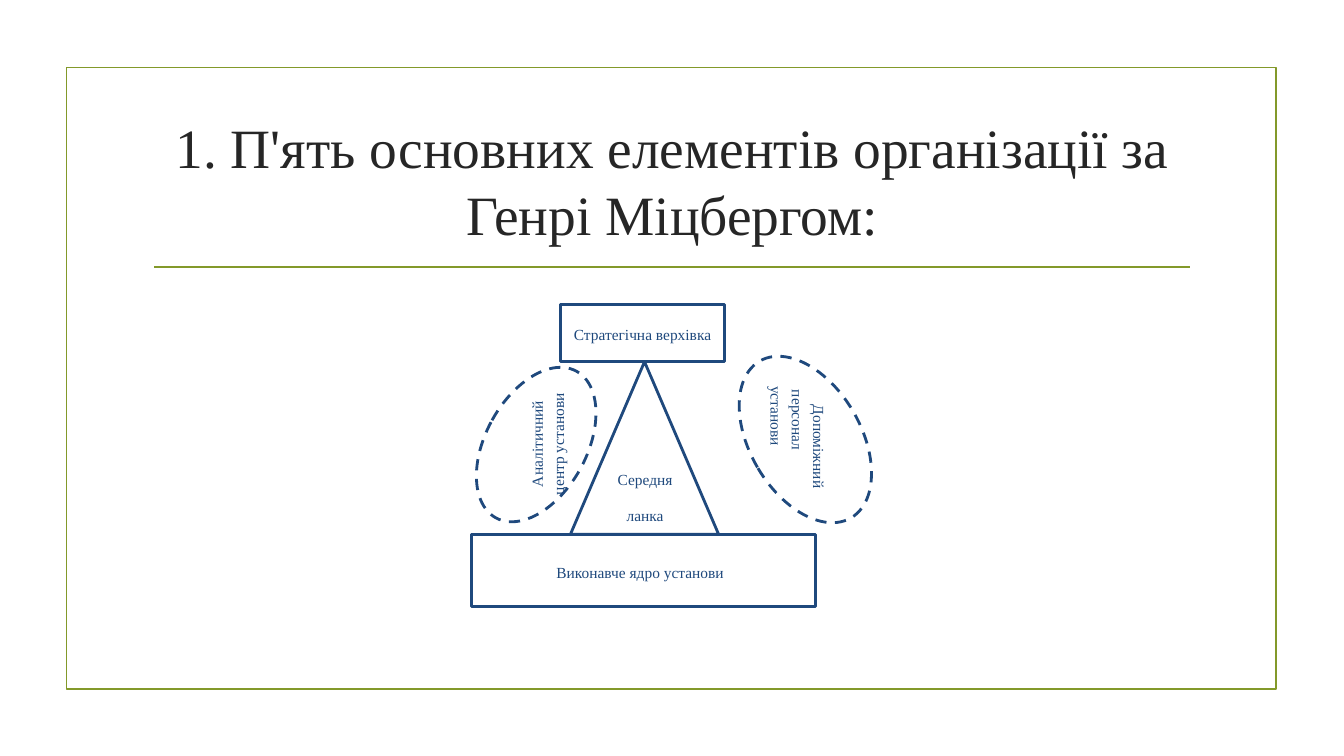
from pptx import Presentation
from pptx.dml.color import RGBColor
from pptx.enum.dml import MSO_LINE
from pptx.enum.shapes import MSO_CONNECTOR, MSO_SHAPE
from pptx.enum.text import MSO_ANCHOR, PP_ALIGN
from pptx.oxml.ns import qn
from pptx.util import Pt
from lxml import etree

COLORS = {"olive": "83992A", "navy": "1F497D", "title": "262626", "white": "FFFFFF"}
FONT = "Times New Roman"


def rgb(name):
    return RGBColor.from_string(COLORS[name])


def add_outline(s, kind, x, y, w, h, color="navy", width=2, fill="white"):
    sp = s.shapes.add_shape(kind, Pt(x), Pt(y), Pt(w), Pt(h))
    sp.shadow.inherit = False
    if fill:
        sp.fill.solid()
        sp.fill.fore_color.rgb = rgb(fill)
    else:
        sp.fill.background()
    sp.line.color.rgb = rgb(color)
    sp.line.width = Pt(width)
    return sp


def write_label(sp, text, anchor=MSO_ANCHOR.MIDDLE, vert=None, after=0):
    tf = sp.text_frame
    tf.text = text
    tf.word_wrap = True
    tf.vertical_anchor = anchor
    tf.margin_left = tf.margin_right = 0
    tf.margin_top = tf.margin_bottom = Pt(3.6)
    if vert:
        # Vertical text runs along the box height, so the ends need no inset
        tf.margin_top = tf.margin_bottom = 0
        tf._txBody.find(qn("a:bodyPr")).set("vert", vert)
    for p in tf.paragraphs:
        p.alignment = PP_ALIGN.CENTER
        p.line_spacing = 1.15
        p.space_after = Pt(after)
        for r in p.runs:
            r.font.name = FONT
            r.font.size = Pt(11)
            r.font.color.rgb = rgb("navy")
    return tf


def add_label(s, x, y, w, h, text, **options):
    box = s.shapes.add_textbox(Pt(x), Pt(y), Pt(w), Pt(h))
    return write_label(box, text, **options)


def add_frame(s, x, y, w, h):
    # Border and the rule under the title
    add_outline(s, MSO_SHAPE.RECTANGLE, x, y, w, h, "olive", 1.25, None)
    rule = s.shapes.add_connector(MSO_CONNECTOR.STRAIGHT, Pt(x + 62.7), Pt(y + 142.6),
                                  Pt(x + 802.8), Pt(y + 142.6))
    rule.line.color.rgb = rgb("olive")
    rule.line.width = Pt(1.25)
    etree.SubElement(rule._element.spPr, qn("a:effectLst"))


def add_title(s, x, y, w, h, text):
    title = s.shapes.title
    title.left, title.top, title.width, title.height = Pt(x), Pt(y), Pt(w), Pt(h)
    tf = title.text_frame
    tf.text = text
    tf.word_wrap = True
    tf.vertical_anchor = MSO_ANCHOR.MIDDLE
    p = tf.paragraphs[0]
    p.alignment = PP_ALIGN.CENTER
    r = p.runs[0]
    r.font.name = FONT
    r.font.size = Pt(39.6)
    r.font.color.rgb = rgb("title")


def add_organization(s, x, y, w, h):
    # Side ellipses: analysts and support staff
    for dx, dy, ew, eh, angle in [(198.7, 31.7, 79.2, 129.6, 329.8),
                                  (10, 40.4, 72, 119.5, 28.8)]:
        ellipse = add_outline(s, MSO_SHAPE.OVAL, x + dx, y + dy, ew, eh, fill=None)
        ellipse.rotation = angle
        ellipse.line.dash_style = MSO_LINE.DASH

    # Base, middle triangle and top
    top_h, base_h = 41, 51.8
    base = add_outline(s, MSO_SHAPE.RECTANGLE, x, y + h - base_h, w, base_h)
    write_label(base, "Виконавче ядро установи").margin_right = Pt(5)
    add_outline(s, MSO_SHAPE.ISOSCELES_TRIANGLE, x + 70.5, y + top_h,
                105.8, h - top_h - base_h)
    top = add_outline(s, MSO_SHAPE.RECTANGLE, x + 63.3, y, 117.4, top_h)
    write_label(top, "Стратегічна верхівка")

    # Labels inside the ellipses and the triangle
    tf = add_label(s, x + 206.5, y + 58.4, 55, 86.4,
                   "Допоміжний\nперсонал установи", vert="vert")
    staff = tf.paragraphs[1]
    staff.alignment = PP_ALIGN.LEFT
    staff._p.get_or_add_pPr().set("indent", str(Pt(2.75)))
    add_label(s, x + 33, y + 55.5, 40, 88.6,
              "Аналітичний центр установи", vert="vert270")
    add_label(s, x + 95.7, y + 113.1, 56.2, 44.6, "Середня\nланка",
              anchor=MSO_ANCHOR.TOP, after=10)


def main():
    prs = Presentation()
    prs.slide_width, prs.slide_height = Pt(960), Pt(540)
    s = prs.slides.add_slide(prs.slide_layouts[5])
    add_frame(s, 47.5, 48.2, 864, 444.2)
    add_title(s, 102.2, 77, 756, 103,
              "1. П'ять основних елементів організації за Генрі Міцбергом:")
    add_organization(s, 337, 217.4, 245.5, 216)
    prs.save("out.pptx")


if __name__ == "__main__":
    main()
